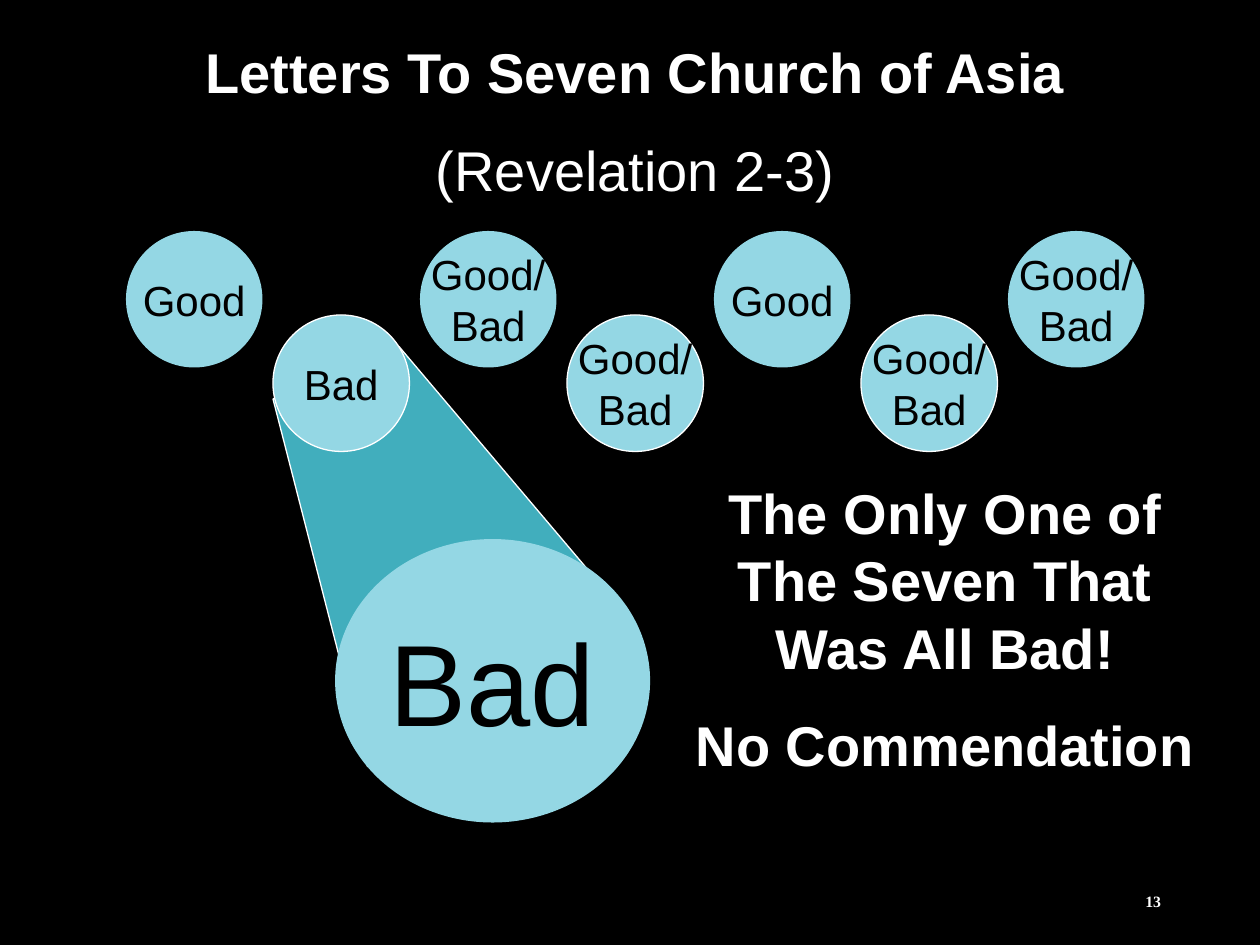
from dataclasses import dataclass

import pptx
import pptx.dml.color
import pptx.enum.shapes
import pptx.enum.text
import pptx.util

Pt = pptx.util.Pt
ALIGN = pptx.enum.text.PP_ALIGN
ANCHOR = pptx.enum.text.MSO_ANCHOR

BLACK, WHITE = "000000", "FFFFFF"
CIRCLE_BLUE, BEAM_TEAL = "94D7E4", "41AEBD"


@dataclass(frozen=True)
class Circle:
    label: str
    left: float
    top: float
    width: float
    height: float
    size: float = 24
    outlined: bool = False


@dataclass(frozen=True)
class Line:
    text: str
    bold: bool = True


def set_fill(fill, colour: str) -> None:
    fill.solid()
    fill.fore_color.rgb = pptx.dml.color.RGBColor.from_string(colour)


def style_shape(shape, fill: str, outlined: bool) -> None:
    shape.shadow.inherit = False
    set_fill(shape.fill, fill)
    if outlined:
        set_fill(shape.line.fill, WHITE)
        shape.line.width = Pt(0.75)
    else:
        shape.line.fill.background()


def write_text(shape, lines: list[Line], *, size: float, colour: str,
               font: str = "Arial", align=ALIGN.CENTER, anchor=ANCHOR.TOP,
               wrap: bool = True, gap: float = 0) -> None:
    """Write one paragraph per line, with the gap between paragraphs."""
    frame = shape.text_frame
    frame.word_wrap = wrap
    frame.vertical_anchor = anchor
    for index, line in enumerate(lines):
        paragraph = frame.add_paragraph() if index else frame.paragraphs[0]
        paragraph.alignment = align
        paragraph.space_before = Pt(gap if index else 0)
        run = paragraph.add_run()
        run.text = line.text
        run.font.name = font
        run.font.size = Pt(size)
        run.font.bold = line.bold
        set_fill(run.font.fill, colour)


def add_text(slide, left: float, top: float, width: float, height: float,
             lines: list[Line], **text_format) -> None:
    box = slide.shapes.add_textbox(Pt(left), Pt(top), Pt(width), Pt(height))
    write_text(box, lines, **text_format)


def add_circle(slide, circle: Circle) -> None:
    shape = slide.shapes.add_shape(
        pptx.enum.shapes.MSO_SHAPE.OVAL, Pt(circle.left), Pt(circle.top),
        Pt(circle.width), Pt(circle.height))
    style_shape(shape, CIRCLE_BLUE, circle.outlined)
    lines = [Line(text, bold=False) for text in circle.label.split("\n")]
    write_text(shape, lines, size=circle.size, colour=BLACK,
               anchor=ANCHOR.MIDDLE, wrap=False)


def add_beam(slide, points: list[tuple[float, float]]) -> None:
    corners = [(Pt(x), Pt(y)) for x, y in points]
    builder = slide.shapes.build_freeform(*corners[0])
    builder.add_line_segments(corners[1:], close=True)
    style_shape(builder.convert_to_shape(), BEAM_TEAL, outlined=True)


def church_circles() -> list[Circle]:
    """Place the seven churches in a zigzag; the lower row is outlined."""
    verdicts = ["Good", "Bad", "Good/\nBad", "Good/\nBad", "Good",
                "Good/\nBad", "Good/\nBad"]
    return [
        Circle(verdict, 72 + 84 * index, 180 if index % 2 else 132, 78, 78,
               outlined=index % 2 == 1)
        for index, verdict in enumerate(verdicts)
    ]


def main() -> None:
    presentation = pptx.Presentation()
    presentation.slide_width, presentation.slide_height = Pt(720), Pt(540)
    slide = presentation.slides.add_slide(presentation.slide_layouts[6])
    set_fill(slide.background.fill, BLACK)

    add_beam(slide, [(156, 228), (210, 438), (360, 354), (228, 198)])
    add_text(slide, 72, 18, 582, 103,
             [Line("Letters To Seven Church of Asia"),
              Line("(Revelation 2-3)", bold=False)],
             size=32, colour=WHITE, gap=17.5)
    for circle in church_circles():
        add_circle(slide, circle)
    add_circle(slide, Circle("Bad", 191.5, 308, 180, 162, size=66))
    add_text(slide, 384, 270, 312, 181.5,
             [Line("The Only One of The Seven That Was All Bad!"),
              Line("No Commendation")],
             size=32, colour=WHITE, gap=17.5)
    add_text(slide, 508.5, 500.5, 162, 29, [Line("13")], size=9, colour=WHITE,
             font="Times New Roman", align=ALIGN.RIGHT, anchor=ANCHOR.MIDDLE)

    presentation.save("out.pptx")


if __name__ == "__main__":
    main()
